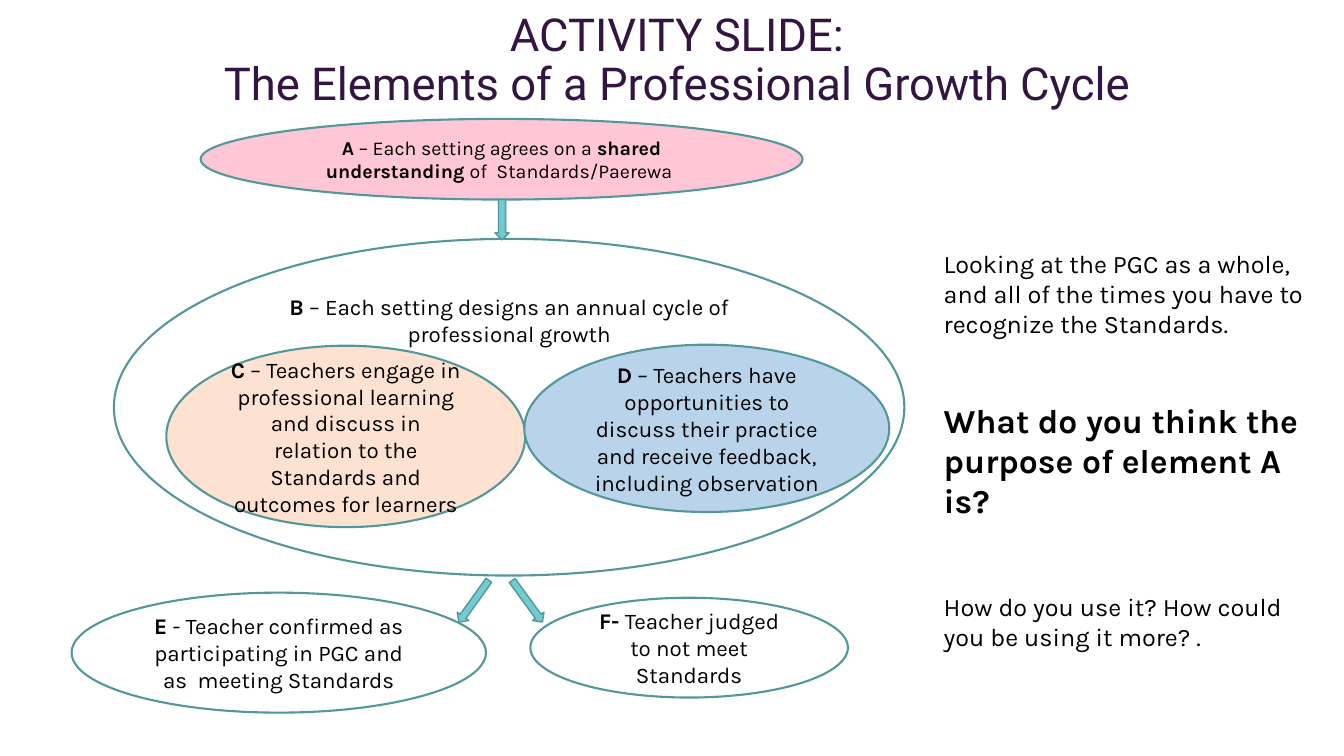
from copy import deepcopy
from dataclasses import dataclass

from lxml import etree
from pptx import Presentation
from pptx.dml.color import RGBColor
from pptx.enum.shapes import MSO_SHAPE
from pptx.enum.text import MSO_ANCHOR, MSO_AUTO_SIZE, PP_ALIGN
from pptx.oxml.ns import qn
from pptx.util import Inches, Pt

ELLIPSE = MSO_SHAPE.OVAL
DOWN_ARROW = MSO_SHAPE.DOWN_ARROW
TOP = MSO_ANCHOR.TOP
MIDDLE = MSO_ANCHOR.MIDDLE
CENTER = PP_ALIGN.CENTER
LEFT = PP_ALIGN.LEFT
NO_AUTOFIT = MSO_AUTO_SIZE.NONE
GROW = MSO_AUTO_SIZE.SHAPE_TO_FIT_TEXT


@dataclass(frozen=True)
class Theme:
    title_font: str = "Roboto"
    body_font: str = "Karla"
    title_color: str = "331542"
    text_color: str = "000000"
    outline: str = "54979B"
    arrow: str = "71CCD2"
    pink: str = "FFC6D6"
    peach: str = "FDE2D2"
    blue: str = "B9D3EB"
    title_size: float = 32.4
    question_size: float = 24
    prompt_size: float = 18
    element_size: float = 16
    small_size: float = 14
    outline_width: float = 1.5
    arrow_width: float = 1


THEME = Theme()

ELEMENTS = [
    ((1.99, 1.18, 5.97, 0.8), THEME.pink, THEME.small_size, MIDDLE,
     [("A", True), (" – Each setting agrees on a ", False),
      ("shared understanding ", True), ("of  Standards/Paerewa ", False)]),
    ((5.26, 5.93, 3.15, 0.99), None, THEME.element_size, MIDDLE,
     [("F-", True), (" Teacher judged to not meet Standards", False)]),
    ((0.71, 5.88, 4.11, 1.19), None, THEME.element_size, MIDDLE,
     [("E", True),
      (" - Teacher confirmed as participating in PGC and as  meeting Standards", False)]),
    ((1.13, 2.37, 7.84, 3.34), None, THEME.element_size, TOP,
     [("B", True),
      (" – Each setting designs an annual cycle of professional growth", False)]),
    ((1.65, 3.43, 3.56, 1.8), THEME.peach, THEME.element_size, MIDDLE,
     [("C", True),
      (" – Teachers engage in professional learning and discuss in relation to "
       "the Standards and outcomes for learners", False)]),
    ((5.2, 3.42, 3.62, 1.66), THEME.blue, THEME.element_size, MIDDLE,
     [("D", True),
      (" – Teachers have opportunities to discuss their practice and receive "
       "feedback, including observation", False)]),
]

ARROWS = [
    ((4.91, 1.98, 0.14, 0.4), 0),
    ((4.63, 5.71, 0.14, 0.51), 35.6),
    ((5.16, 5.71, 0.14, 0.51), 323.9),
]

PROMPTS = [
    ("Looking at the PGC as a whole, and all of the times you have to "
     "recognize the Standards.", THEME.prompt_size, False, 0),
    ("What do you think the purpose of element A is?",
     THEME.question_size, True, 43.6),
    ("How do you use it? How could you be using it more? .",
     THEME.prompt_size, False, 50.6),
]


def place(shape, box):
    shape.left, shape.top, shape.width, shape.height = map(Inches, box)


def format_run(run, size, bold=False, font=THEME.body_font, color=THEME.text_color):
    run.font.name = font
    run.font.size = Pt(size)
    run.font.bold = bold
    run.font.color.rgb = RGBColor.from_string(color)


def add_outlined_shape(slide, kind, box, fill, line_width):
    shape = slide.shapes.add_shape(kind, *map(Inches, box))
    shape.shadow.inherit = False
    if fill:
        shape.fill.solid()
        shape.fill.fore_color.rgb = RGBColor.from_string(fill)
    else:
        shape.fill.background()
    shape.line.color.rgb = RGBColor.from_string(THEME.outline)
    shape.line.width = Pt(line_width)
    return shape


def add_element(slide, box, fill, size, anchor, pieces):
    shape = add_outlined_shape(slide, ELLIPSE, box, fill, THEME.outline_width)
    shape.text_frame.word_wrap = True
    shape.text_frame.vertical_anchor = anchor
    paragraph = shape.text_frame.paragraphs[0]
    paragraph.alignment = CENTER
    for text, bold in pieces:
        run = paragraph.add_run()
        run.text = text
        format_run(run, size, bold)


def add_arrow(slide, box, rotation):
    shape = add_outlined_shape(slide, DOWN_ARROW, box, THEME.arrow, THEME.arrow_width)
    shape.rotation = rotation


def fill_title(title):
    place(title, (0.81, 0.2, 11.81, 0.81))
    frame = title.text_frame
    frame.text = "ACTIVITY SLIDE:\vThe Elements of a Professional Growth Cycle"
    frame.word_wrap = True
    frame.auto_size = NO_AUTOFIT
    frame.vertical_anchor = MIDDLE
    paragraph = frame.paragraphs[0]
    paragraph.alignment = CENTER
    paragraph.line_spacing = 0.9
    for run in paragraph.runs:
        format_run(run, THEME.title_size, font=THEME.title_font, color=THEME.title_color)
    run_properties = paragraph.runs[0].font._element
    for line_break in paragraph._p.findall(qn("a:br")):
        line_break.append(deepcopy(run_properties))


def fill_prompts(body):
    place(body, (9.26, 2.41, 3.85, 3.74))
    frame = body.text_frame
    frame.text = "\n".join(text for text, *_ in PROMPTS)
    frame.word_wrap = True
    frame.auto_size = GROW
    frame.vertical_anchor = TOP
    for paragraph, (_, size, bold, space_before) in zip(frame.paragraphs, PROMPTS):
        properties = paragraph._p.get_or_add_pPr()
        properties.set("marL", "0")
        properties.set("indent", "0")
        etree.SubElement(properties, qn("a:buNone"))
        paragraph.alignment = LEFT
        paragraph.space_before = Pt(space_before)
        for run in paragraph.runs:
            format_run(run, size, bold)


def main():
    presentation = Presentation()
    presentation.slide_width = Inches(13.33)
    presentation.slide_height = Inches(7.5)
    slide = presentation.slides.add_slide(presentation.slide_layouts[1])
    fill_title(slide.shapes.title)
    fill_prompts(slide.placeholders[1])
    for element in ELEMENTS:
        add_element(slide, *element)
    for arrow in ARROWS:
        add_arrow(slide, *arrow)
    presentation.save("out.pptx")


if __name__ == "__main__":
    main()
